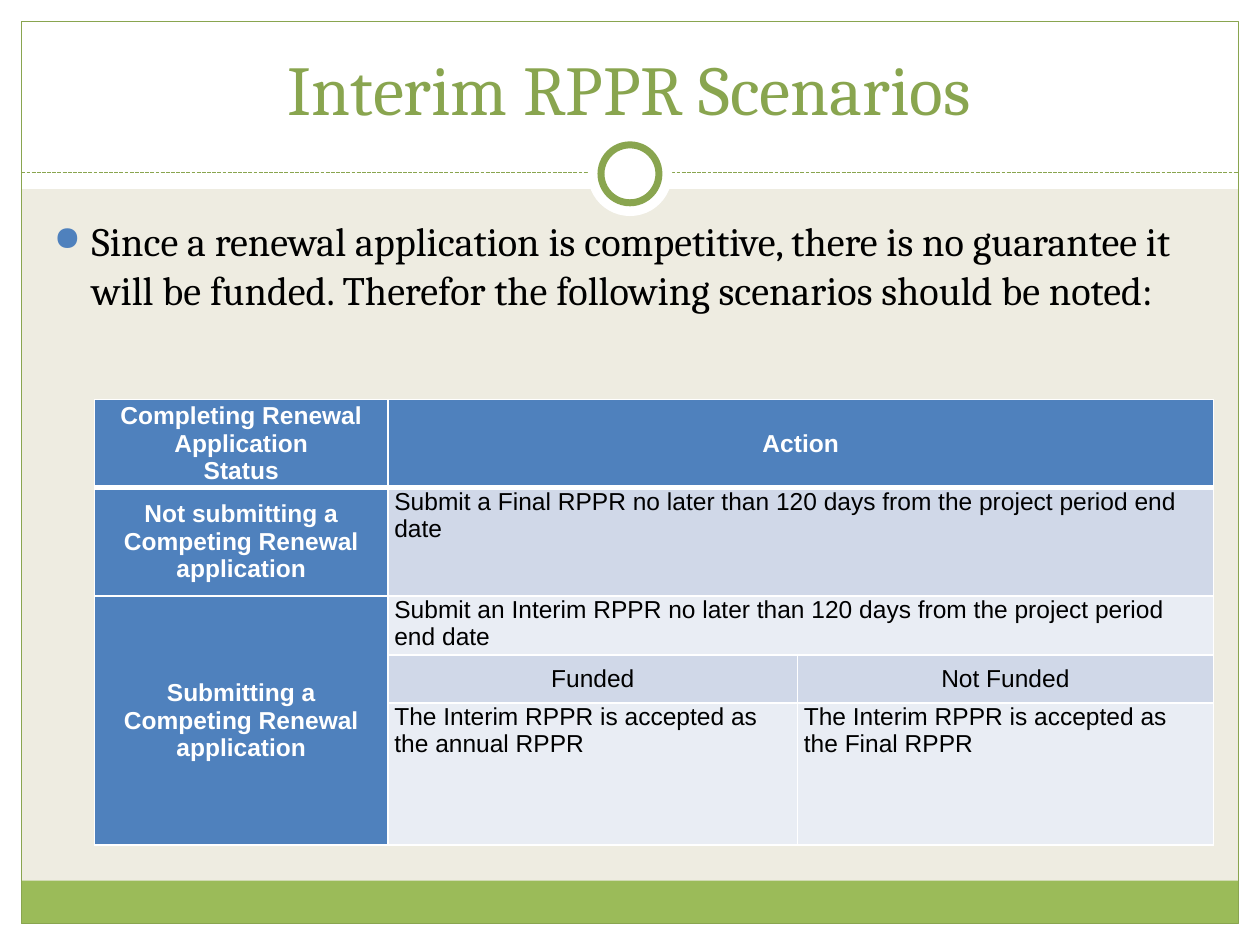
import pptx
import pptx.util
import pptx.dml.color
import pptx.enum.dml
import pptx.enum.shapes
import pptx.enum.text
import pptx.oxml.ns
import lxml.etree

WIDTH, HEIGHT = 10, 7.5
EDGE = 0.17
RULE_Y = 1.37
COLORS = {
    "background": "EEECE1", "white": "FFFFFF", "green": "9BBB59",
    "dark_green": "89A54F", "blue": "4F81BD", "band": "D0D8E8",
    "light_band": "E9EDF4", "black": "000000",
}
COLUMN_WIDTHS = [2.33, 3.25, 3.3]
ROW_HEIGHTS = [0.63, 0.86, 0.42, 0.38, 1.13]
SHAPES = pptx.enum.shapes.MSO_SHAPE
ALIGN = pptx.enum.text.PP_ALIGN
ANCHOR = pptx.enum.text.MSO_ANCHOR

# row, column, rows spanned, columns spanned, text, fill, heading, centred
CELLS = [
    (0, 0, 1, 1, "Completing Renewal Application\nStatus", "blue", True, True),
    (0, 1, 1, 2, "Action", "blue", True, True),
    (1, 0, 1, 1, "Not submitting a Competing Renewal application", "blue", True, True),
    (1, 1, 1, 2, "Submit a Final RPPR no later than 120 days from the project period end date",
     "band", False, False),
    (2, 0, 3, 1, "Submitting a Competing Renewal application", "blue", True, True),
    (2, 1, 1, 2, "Submit an Interim RPPR no later than 120 days from the project period end date",
     "light_band", False, False),
    (3, 1, 1, 1, "Funded", "band", False, True),
    (3, 2, 1, 1, "Not Funded", "band", False, True),
    (4, 1, 1, 1, "The Interim RPPR is accepted as the annual RPPR", "light_band", False, False),
    (4, 2, 1, 1, "The Interim RPPR is accepted as the Final RPPR", "light_band", False, False),
]


def rgb(name):
    return pptx.dml.color.RGBColor.from_string(COLORS[name])


def box(left, top, width, height):
    return [pptx.util.Inches(value) for value in (left, top, width, height)]


def add_element(parent, tag, **attributes):
    return lxml.etree.SubElement(parent, pptx.oxml.ns.qn(tag), attributes)


def format_runs(text_frame, font_name, size, color, bold=False):
    for paragraph in text_frame.paragraphs:
        for run in paragraph.runs:
            run.font.name = font_name
            run.font.size = pptx.util.Pt(size)
            run.font.bold = bold
            run.font.color.rgb = rgb(color)


def add_panel(slide, kind, area, fill=None, line=None, line_width=0.75):
    shape = slide.shapes.add_shape(kind, *box(*area))
    shape.shadow.inherit = False
    if fill:
        shape.fill.solid()
        shape.fill.fore_color.rgb = rgb(fill)
    else:
        shape.fill.background()
    if line:
        shape.line.color.rgb = rgb(line)
        shape.line.width = pptx.util.Pt(line_width)
    else:
        shape.line.fill.background()


def add_circle(slide, diameter, **style):
    area = (WIDTH / 2 - diameter / 2, RULE_Y + 0.01 - diameter / 2, diameter, diameter)
    add_panel(slide, SHAPES.OVAL, area, "white", **style)


def add_dashed_rule(slide):
    start_x, y, end_x, end_y = box(EDGE, RULE_Y, WIDTH - EDGE, RULE_Y)
    connector = slide.shapes.add_connector(
        pptx.enum.shapes.MSO_CONNECTOR.STRAIGHT, start_x, y, end_x, end_y)
    connector.line.color.rgb = rgb("dark_green")
    connector.line.width = pptx.util.Pt(0.75)
    connector.line.dash_style = pptx.enum.dml.MSO_LINE.SQUARE_DOT
    add_element(connector.element.spPr, "a:effectLst")


def add_frame(slide):
    for area in [
        (0, HEIGHT - EDGE, WIDTH, EDGE),
        (0, 0, WIDTH, 1.5),
        (0, 0, EDGE, HEIGHT),
        (WIDTH - EDGE, 0, EDGE, HEIGHT),
    ]:
        add_panel(slide, SHAPES.RECTANGLE, area, "white")
    inner_width = WIDTH - 2 * EDGE
    add_panel(slide, SHAPES.RECTANGLE, (EDGE, 6.99, inner_width, 0.34), "green")
    add_panel(slide, SHAPES.RECTANGLE, (EDGE, EDGE, inner_width, HEIGHT - 2 * EDGE),
              line="dark_green")
    add_dashed_rule(slide)
    add_circle(slide, 0.67)
    add_circle(slide, 0.46, line="dark_green", line_width=4)


def set_title(slide, text):
    title = slide.shapes.title
    title.left, title.top, title.width, title.height = box(0.33, 0.25, 9.33, 0.83)
    title.text_frame.text = text
    title.text_frame.vertical_anchor = ANCHOR.BOTTOM
    title.text_frame.paragraphs[0].alignment = ALIGN.CENTER
    format_runs(title.text_frame, "Cambria", 40, "dark_green")
    title.element.getparent().append(title.element)


def add_bullet_text(slide, text):
    text_frame = slide.shapes.add_textbox(*box(0.33, 1.67, 9.3, 5)).text_frame
    text_frame.word_wrap = True
    text_frame.text = text
    properties = text_frame.paragraphs[0]._p.get_or_add_pPr()
    indent = pptx.util.Inches(0.3)
    properties.set("marL", str(indent))
    properties.set("indent", str(-indent))
    bullet_color = add_element(properties, "a:buClr")
    add_element(bullet_color, "a:srgbClr", val=COLORS["blue"])
    add_element(properties, "a:buSzPct", val="85000")
    add_element(properties, "a:buChar", char="●")
    format_runs(text_frame, "Cambria", 23, "black")


def set_borders(cell, top, bottom):
    properties = cell._tc.get_or_add_tcPr()
    for tag, width in (("a:lnL", 1), ("a:lnR", 1), ("a:lnT", top), ("a:lnB", bottom)):
        line = add_element(properties, tag, w=str(pptx.util.Pt(width)))
        fill = add_element(line, "a:solidFill")
        add_element(fill, "a:srgbClr", val=COLORS["white"])


def fill_cell(cell, text, fill, heading, centred):
    cell.fill.solid()
    cell.fill.fore_color.rgb = rgb(fill)
    cell.text_frame.text = text
    cell.vertical_anchor = ANCHOR.MIDDLE if centred else ANCHOR.TOP
    for paragraph in cell.text_frame.paragraphs:
        paragraph.alignment = ALIGN.CENTER if centred else ALIGN.LEFT
    format_runs(cell.text_frame, "Arial", 14, "white" if heading else "black", heading)


def add_scenario_table(slide):
    area = box(0.75, 3.17, sum(COLUMN_WIDTHS), sum(ROW_HEIGHTS))
    table = slide.shapes.add_table(len(ROW_HEIGHTS), len(COLUMN_WIDTHS), *area).table
    for column, width in zip(table.columns, COLUMN_WIDTHS):
        column.width = pptx.util.Inches(width)
    for index, (row, height) in enumerate(zip(table.rows, ROW_HEIGHTS)):
        row.height = pptx.util.Inches(height)
        for cell in row.cells:
            cell.margin_left = cell.margin_right = pptx.util.Inches(0.05)
            cell.margin_top = cell.margin_bottom = 0
            set_borders(cell, 3 if index == 1 else 1, 3 if index == 0 else 1)
    for row, column, row_span, column_span, *content in CELLS:
        cell = table.cell(row, column)
        if row_span * column_span > 1:
            cell.merge(table.cell(row + row_span - 1, column + column_span - 1))
        fill_cell(cell, *content)


def main():
    presentation = pptx.Presentation()
    presentation.slide_width = pptx.util.Inches(WIDTH)
    presentation.slide_height = pptx.util.Inches(HEIGHT)
    slide = presentation.slides.add_slide(presentation.slide_layouts[5])
    slide.background.fill.solid()
    slide.background.fill.fore_color.rgb = rgb("background")
    add_frame(slide)
    set_title(slide, "Interim RPPR Scenarios")
    add_bullet_text(slide, "Since a renewal application is competitive, there is no guarantee it "
                    "will be funded. Therefor the following scenarios should be noted:")
    add_scenario_table(slide)
    presentation.save("out.pptx")


if __name__ == "__main__":
    main()
